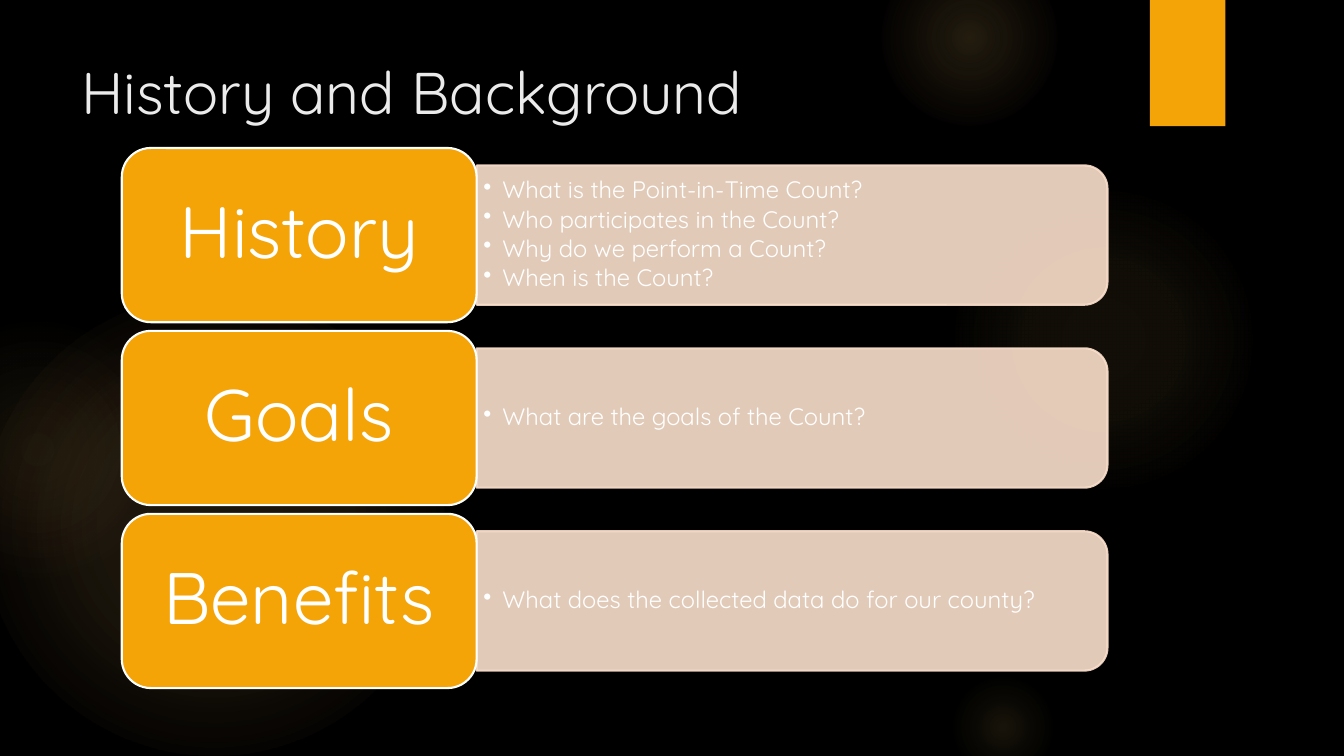
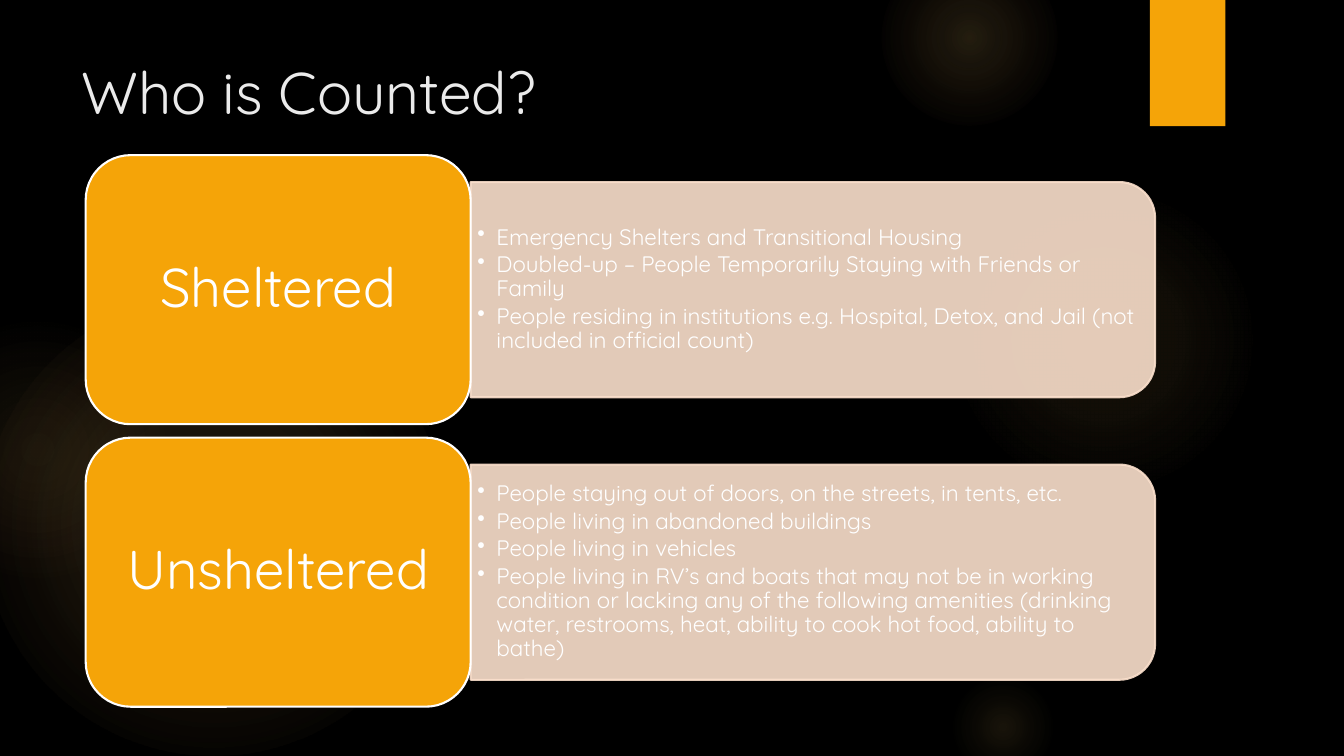
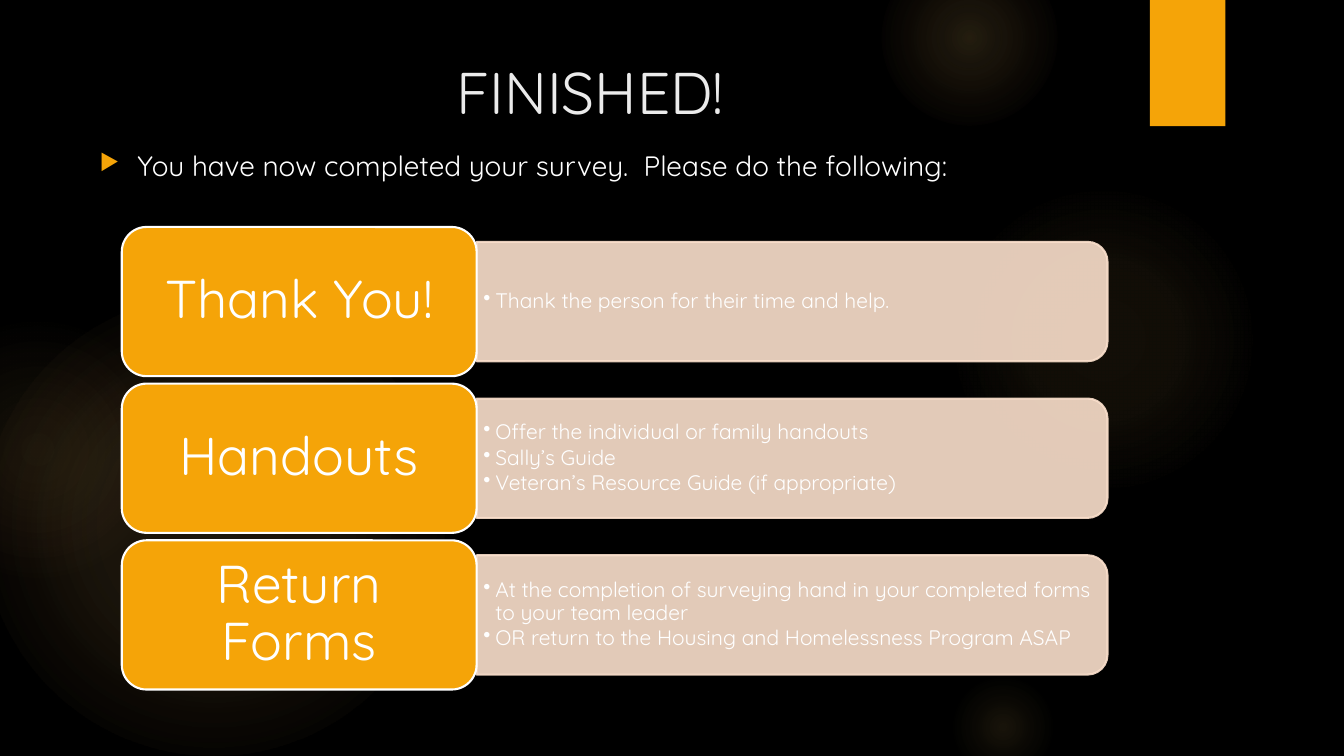
from pptx import Presentation
from pptx import util as u
from pptx.dml.color import RGBColor
from pptx.enum import shapes, text
from pptx.oxml import parse_xml
from pptx.oxml.ns import nsdecls, qn
from lxml import etree

FONT = "Quicksand"
COLORS = {
    "background": "000000",
    "accent": "F5A408",
    "panel": "FBE0CC",
    "title": "EBEBEB",
    "white": "FFFFFF",
    "glow": "FAC96A",
    "ember": "F59B74",
}
GLOWS = [
    (-0.43, 7.42, 11.63, [(0, "glow", 11), (36, "glow", 10), (75, "glow", 0)]),
    (-2.34, 8.05, 6.55, [(0, "glow", 8), (36, "glow", 5), (71, "ember", 0)]),
    (23.9, 4.65, 7.82, [(0, "glow", 7), (36, "glow", 6), (69, "glow", 0)]),
    (22.22, -1.27, 4.44, [(0, "glow", 14), (36, "glow", 7), (73, "glow", 0)]),
    (23.9, 16.94, 2.74, [(0, "glow", 10), (31, "glow", 5), (66, "glow", 0)]),
]
SLIDES = [
    {
        "title": "History and Background",
        "left": 3.07, "top": 3.73, "width": 24.84, "row": 4.39,
        "label_size": 52, "label_inset": 0.56, "item_size": 17, "indent": 0.48,
        "rows": [
            ("History", [
                "What is the Point-in-Time Count?",
                "Who participates in the Count?",
                "Why do we perform a Count?",
                "When is the Count?",
            ]),
            ("Goals", ["What are the goals of the Count?"]),
            ("Benefits", ["What does the collected data do for our county?"]),
        ],
    },
    {
        "title": "Who is Counted?",
        "left": 2.16, "top": 3.91, "width": 26.95, "row": 6.78,
        "label_size": 39, "label_inset": 0.41, "item_size": 16, "indent": 0.48,
        "rows": [
            ("Sheltered", [
                "Emergency Shelters and Transitional Housing",
                "Doubled-up – People Temporarily Staying with Friends or Family",
                "People residing in institutions e.g. Hospital, Detox, and Jail "
                "(not included in official count)",
            ]),
            ("Unsheltered", [
                "People staying out of doors, on the streets, in tents, etc.",
                "People living in abandoned buildings",
                "People living in vehicles",
                "People living in RV’s and boats that may not be in working condition "
                "or lacking any of the following amenities (drinking water, restrooms, "
                "heat, ability to cook hot food, ability to bathe)",
            ]),
        ],
    },
    {
        "title": "FINISHED!",
        "centered": True,
        "intro": "You have now completed your survey.  Please do the following:",
        "left": 3.07, "top": 5.72, "width": 24.84, "row": 3.76,
        "label_size": 38, "label_inset": 0.41, "item_size": 15, "indent": 0.3,
        "rows": [
            ("Thank You!", ["Thank the person for their time and help."]),
            ("Handouts", [
                "Offer the individual or family handouts",
                "Sally’s Guide",
                "Veteran’s Resource Guide (if appropriate)",
            ]),
            ("Return Forms", [
                "At the completion of surveying hand in your completed forms "
                "to your team leader",
                "OR return to the Housing and Homelessness Program ASAP",
            ]),
        ],
    },
]
LABEL_SHARE = 0.36
PANEL_SHARE = 0.8
ROW_PITCH = 1.05
PANEL_OPACITY = 90


def rgb(name):
    return RGBColor.from_string(COLORS[name])


def add_block(page, kind, left, top, width, height, fill, line=None):
    block = page.shapes.add_shape(kind, u.Cm(left), u.Cm(top), u.Cm(width), u.Cm(height))
    block.shadow.inherit = False
    block.fill.solid()
    block.fill.fore_color.rgb = rgb(fill)
    if line:
        block.line.color.rgb = rgb(line)
        block.line.width = u.Pt(1.5)
    else:
        block.line.fill.background()
    return block


def add_box(page, left, top, width, height):
    return page.shapes.add_textbox(u.Cm(left), u.Cm(top), u.Cm(width), u.Cm(height))


def write(shape, lines, size, color="white", align=text.PP_ALIGN.LEFT,
          anchor=text.MSO_ANCHOR.MIDDLE, inset=(0.25, 0.13), spacing=None, after=0):
    frame = shape.text_frame
    frame.text = "\n".join(lines)
    frame.word_wrap = True
    frame.vertical_anchor = anchor
    frame.margin_left = frame.margin_right = u.Cm(inset[0])
    frame.margin_top = frame.margin_bottom = u.Cm(inset[1])
    for para in frame.paragraphs:
        para.alignment = align
        para.line_spacing = spacing
        para.space_after = u.Pt(round(after * size, 2))
        for span in para.runs:
            span.font.name = FONT
            span.font.size = u.Pt(size)
            span.font.color.rgb = rgb(color)
    return frame.paragraphs


def add_bullet(para, char, indent, color=None, percent=None):
    props = para._p.get_or_add_pPr()
    props.set("marL", str(u.Cm(indent)))
    props.set("indent", str(-u.Cm(indent)))
    if color:
        tint = etree.SubElement(props, qn("a:buClr"))
        etree.SubElement(tint, qn("a:srgbClr"), val=COLORS[color])
    if percent:
        etree.SubElement(props, qn("a:buSzPct"), val=str(percent * 1000))
    etree.SubElement(props, qn("a:buChar"), char=char)


def add_glow(page, left, top, size, stops):
    glow = add_block(page, shapes.MSO_SHAPE.OVAL, left, top, size, size, "glow")
    marks = "".join(
        f'<a:gs pos="{pos * 1000}"><a:srgbClr val="{COLORS[color]}">'
        f'<a:alpha val="{alpha * 1000}"/></a:srgbClr></a:gs>'
        for pos, color, alpha in stops
    )
    gradient = parse_xml(
        f'<a:gradFill {nsdecls("a")}><a:gsLst>{marks}</a:gsLst><a:path path="circle">'
        '<a:fillToRect l="50000" t="50000" r="50000" b="50000"/></a:path></a:gradFill>'
    )
    props = glow._element.spPr
    props.replace(props.find(qn("a:solidFill")), gradient)


def add_panel(page, left, top, width, height):
    panel = add_block(
        page, shapes.MSO_SHAPE.ROUND_2_SAME_RECTANGLE,
        left + (width - height) / 2, top + (height - width) / 2,
        height, width, "panel", "panel",
    )
    panel.rotation = 90
    for color in panel._element.spPr.iter(qn("a:srgbClr")):
        etree.SubElement(color, qn("a:alpha"), val=str(PANEL_OPACITY * 1000))


def add_row(page, content, top, label, items):
    left, height = content["left"], content["row"]
    label_width = content["width"] * LABEL_SHARE
    panel_left = left + label_width
    panel_width = content["width"] - label_width
    panel_height = height * PANEL_SHARE
    panel_top = top + (height - panel_height) / 2

    add_panel(page, panel_left, panel_top, panel_width, panel_height)
    box = add_box(page, panel_left, panel_top, panel_width - 0.05 * panel_height, panel_height)
    for para in write(box, items, content["item_size"], inset=(0.17, 0.09),
                      spacing=0.9, after=0.15):
        add_bullet(para, "•", content["indent"])

    tile = add_block(page, shapes.MSO_SHAPE.ROUNDED_RECTANGLE, left, top,
                     label_width, height, "accent", "white")
    inset = content["label_inset"]
    write(tile, [label], content["label_size"], align=text.PP_ALIGN.CENTER,
          inset=(inset, inset / 2), spacing=0.9)


def add_page(deck, content):
    page = deck.slides.add_slide(deck.slide_layouts[6])
    for glow in GLOWS:
        add_glow(page, *glow)
    add_block(page, shapes.MSO_SHAPE.RECTANGLE, 28.98, 0, 1.9, 3.18, "accent")
    align = text.PP_ALIGN.CENTER if content.get("centered") else text.PP_ALIGN.LEFT
    write(add_box(page, 1.8, 1.27, 26.14, 3.89), [content["title"]], 42, "title",
          align, text.MSO_ANCHOR.TOP)
    for index, (label, items) in enumerate(content["rows"]):
        add_row(page, content, content["top"] + index * content["row"] * ROW_PITCH, label, items)
    if "intro" in content:
        box = add_box(page, 2.26, 3.61, 26.67, 1.5)
        intro = write(box, [content["intro"]], 20, anchor=text.MSO_ANCHOR.TOP)[0]
        add_bullet(intro, "▶", 0.95, "accent", 80)


def main():
    deck = Presentation()
    deck.slide_width, deck.slide_height = u.Cm(33.87), u.Cm(19.05)
    backdrop = deck.slide_master.background.fill
    backdrop.solid()
    backdrop.fore_color.rgb = rgb("background")
    for content in SLIDES:
        add_page(deck, content)
    deck.save("out.pptx")


if __name__ == "__main__":
    main()
